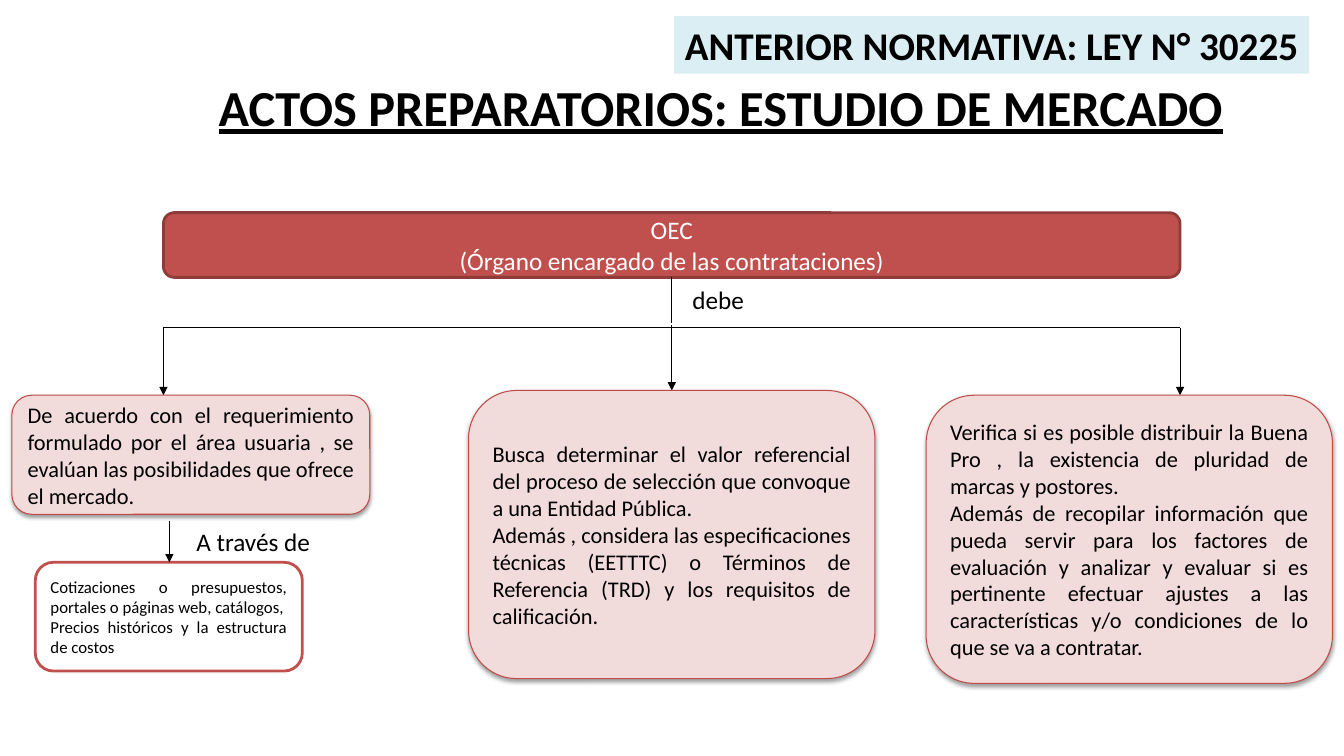
from lxml import etree
from pptx import Presentation
from pptx.dml.color import RGBColor
from pptx.enum.shapes import MSO_CONNECTOR, MSO_SHAPE
from pptx.enum.text import MSO_ANCHOR, PP_ALIGN
from pptx.oxml.ns import qn
from pptx.util import Cm, Pt

LEFT, CENTER, JUSTIFY = PP_ALIGN.LEFT, PP_ALIGN.CENTER, PP_ALIGN.JUSTIFY
TOP, MIDDLE = MSO_ANCHOR.TOP, MSO_ANCHOR.MIDDLE
RECT, ROUNDED = MSO_SHAPE.RECTANGLE, MSO_SHAPE.ROUNDED_RECTANGLE
STRAIGHT = MSO_CONNECTOR.STRAIGHT

FONT = "Calibri"
COLORS = {"ink": "000000", "white": "FFFFFF", "red": "C0504D", "dark_red": "8E3B39",
          "duty_line": "BF4C48", "pink": "F2DCDB", "sky": "DBEEF4"}

# Boxes are (left, top, width, height) in centimetres.
TITLE = ("ACTOS PREPARATORIOS: ESTUDIO DE MERCADO", (5.51, 1.91, 27.51, 3))
BANNER = ("ANTERIOR NORMATIVA: LEY N° 30225", (16.99, 0.41, 16, 1.45))
AGENCY = ("OEC\n(Órgano encargado de las contrataciones)", (4.12, 5.36, 25.62, 1.63))
DUTIES = [
    ("De acuerdo con el requerimiento formulado por el área usuaria , se evalúan las "
     "posibilidades que ofrece el mercado.", (0.3, 9.96, 9.02, 3)),
    ("Busca determinar el valor referencial del proceso de selección que convoque a una "
     "Entidad Pública.\nAdemás , considera las especificaciones técnicas (EETTTC) o Términos "
     "de Referencia (TRD) y los requisitos de calificación.", (11.81, 9.84, 10.24, 7.26)),
    ("Verifica si es posible distribuir la Buena Pro , la existencia de pluridad de marcas y "
     "postores.\nAdemás de recopilar información que pueda servir para los factores de "
     "evaluación y analizar y evaluar si es pertinente efectuar ajustes a las características "
     "y/o condiciones de lo que se va a contratar.", (23.34, 9.96, 10.24, 7.26)),
]
SOURCES = ("Cotizaciones o presupuestos, portales o páginas web, catálogos,\n"
           "Precios históricos y la estructura de costos", (0.89, 14.17, 6.73, 2.74))
LINK_LABELS = [("debe", (17.2, 7.04, 2.64, 1.02)), ("A través de", (4.7, 13.13, 3.78, 1.02))]
BRANCH_Y = 8.26
STEM_END, MIDDLE_DROP_START = 8.13, 8.18
SOURCES_ARROW_X, SOURCES_ARROW_START = 4.27, 13.13


def rgb(name):
    return RGBColor.from_string(COLORS[name])


def write(frame, text, size, color="ink", align=LEFT, anchor=TOP, bold=False, underline=False):
    frame.text = text
    frame.word_wrap = True
    frame.vertical_anchor = anchor
    for paragraph in frame.paragraphs:
        paragraph.alignment = align
        for run in paragraph.runs:
            font = run.font
            font.name, font.size, font.bold, font.underline = FONT, Pt(size), bold, underline
            font.color.rgb = rgb(color)


def add_label(slide, text, box, size, **style):
    label = slide.shapes.add_textbox(*map(Cm, box))
    write(label.text_frame, text, size, **style)
    return label


def add_panel(slide, kind, text, box, size, fill, line=None, width=0, **style):
    panel = slide.shapes.add_shape(kind, *map(Cm, box))
    panel.shadow.inherit = False
    panel.fill.solid()
    panel.fill.fore_color.rgb = rgb(fill)
    if line:
        panel.line.color.rgb = rgb(line)
        panel.line.width = Pt(width)
    else:
        panel.line.fill.background()
    write(panel.text_frame, text, size, **style)
    return panel


def drop_shadow(panel):
    effects = panel._element.spPr.find(qn("a:effectLst"))
    outer = etree.SubElement(effects, qn("a:outerShdw"), blurRad=str(Pt(3.1)),
                             dist=str(Pt(1.6)), dir="5400000", rotWithShape="0")
    black = etree.SubElement(outer, qn("a:srgbClr"), val=COLORS["ink"])
    etree.SubElement(black, qn("a:alpha"), val="38000")


def add_line(slide, x1, y1, x2, y2, arrow=False):
    line = slide.shapes.add_connector(STRAIGHT, Cm(x1), Cm(y1), Cm(x2), Cm(y2))
    line.line.color.rgb = rgb("ink")
    line.line.width = Pt(0.75)
    if arrow:
        etree.SubElement(line.line._get_or_add_ln(), qn("a:tailEnd"), type="triangle")
    etree.SubElement(line._element.spPr, qn("a:effectLst"))


def main():
    deck = Presentation()
    deck.slide_width, deck.slide_height = Cm(33.87), Cm(19.05)
    slide = deck.slides.add_slide(deck.slide_layouts[6])

    title = add_label(slide, *TITLE, 36, bold=True, underline=True).text_frame
    title.margin_left = title.margin_right = title.margin_top = title.margin_bottom = 0
    add_panel(slide, ROUNDED, *AGENCY, 18, "red", "dark_red", 2,
              color="white", align=CENTER, anchor=MIDDLE)

    left, top, width, height = AGENCY[1]
    center, right = left + width / 2, left + width
    add_line(slide, center, top + height, center, STEM_END)
    add_line(slide, left, BRANCH_Y, right, BRANCH_Y)
    starts = (BRANCH_Y, MIDDLE_DROP_START, BRANCH_Y)
    for x, start, (text, box) in zip((left, center, right), starts, DUTIES):
        add_line(slide, x, start, x, box[1], arrow=True)
        drop_shadow(add_panel(slide, ROUNDED, text, box, 16, "pink", "duty_line", 0.75,
                              align=JUSTIFY, anchor=MIDDLE))

    add_panel(slide, ROUNDED, *SOURCES, 12, "white", "red", 2, align=JUSTIFY, anchor=MIDDLE)
    for text, box in LINK_LABELS:
        add_label(slide, text, box, 18)
    add_line(slide, SOURCES_ARROW_X, SOURCES_ARROW_START,
             SOURCES_ARROW_X, SOURCES[1][1], arrow=True)
    add_panel(slide, RECT, *BANNER, 28, "sky", align=CENTER, bold=True)

    deck.save("out.pptx")


if __name__ == "__main__":
    main()
